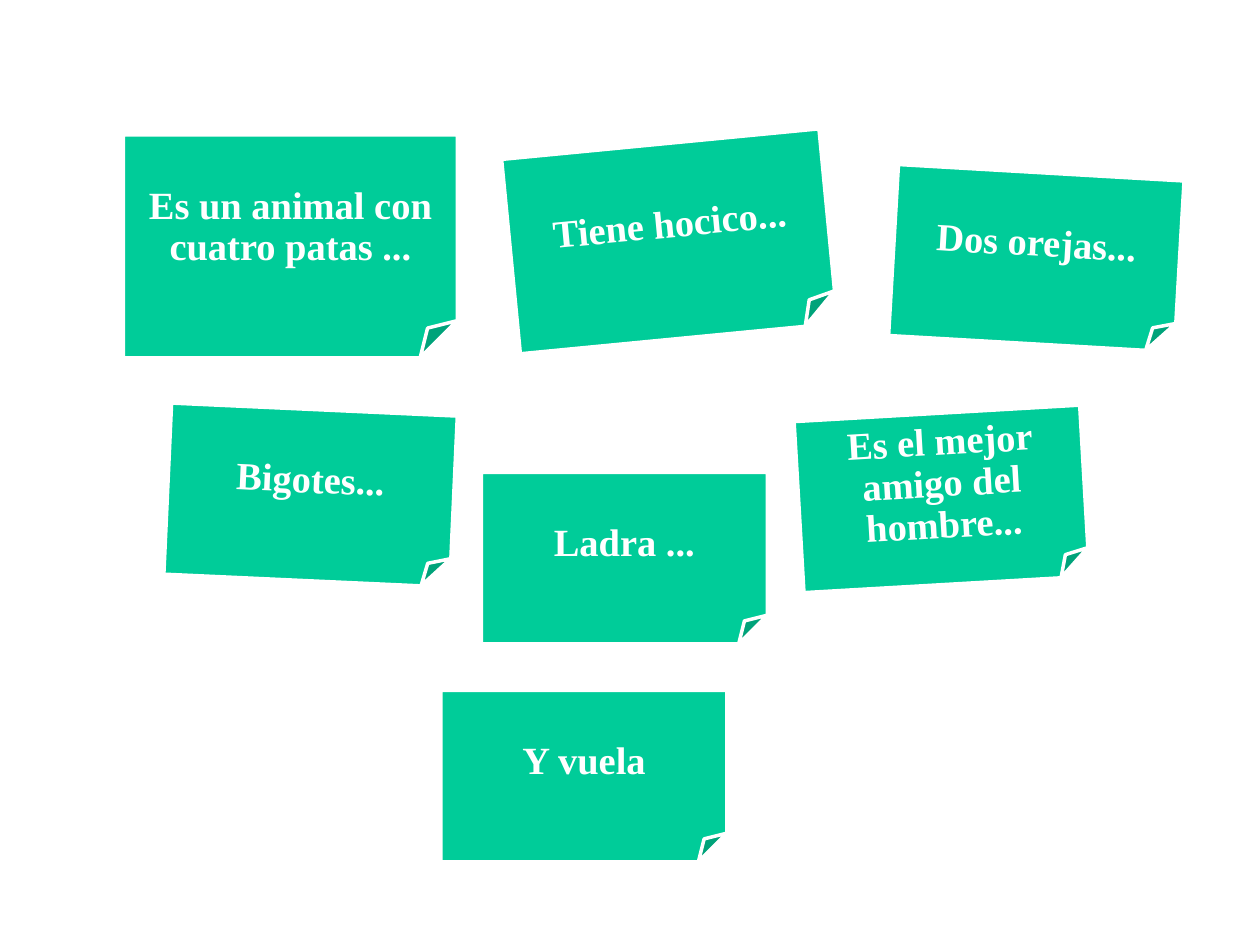
from dataclasses import dataclass
from pptx import Presentation as Deck
from pptx.dml.color import RGBColor as Color
from pptx.enum.shapes import MSO_SHAPE as Kind
from pptx.enum.text import MSO_ANCHOR as Anchor, PP_ALIGN as Align
from pptx.util import Emu, Pt


@dataclass(frozen=True)
class Theme:
    green: str = "00CC99"
    white: str = "FFFFFF"
    face: str = "Times New Roman"
    size: int = 22
    edge: int = 2


def px(num):
    return Emu(num * 9144)


def write(frame, text, *, face, size, color, bold=True, after=8, lead=0.9):
    para = frame.paragraphs[0]
    para.alignment = Align.CENTER
    para.line_spacing = lead
    para.space_after = Pt(after)
    run = para.add_run()
    run.text = text
    font = run.font
    font.name, font.size, font.bold = face, Pt(size), bold
    font.color.rgb = Color.from_string(color)


class Board:
    def __init__(self, slide, theme):
        self.slide = slide
        self.theme = theme

    def sheet(self, group, box, turn):
        theme = self.theme
        shape = group.shapes.add_shape(Kind.FOLDED_CORNER, *map(px, box))
        shape.rotation = turn
        shape.shadow.inherit = False
        shape.fill.solid()
        shape.fill.fore_color.rgb = Color.from_string(theme.green)
        shape.line.color.rgb = Color.from_string(theme.white)
        shape.line.width = Pt(theme.edge)

    def label(self, group, text, box, turn):
        theme = self.theme
        shape = group.shapes.add_textbox(*map(px, box))
        shape.rotation = turn
        frame = shape.text_frame
        frame.word_wrap = True
        frame.vertical_anchor = Anchor.MIDDLE
        frame.margin_left = frame.margin_right = px(9)
        frame.margin_top = frame.margin_bottom = px(9)
        write(frame, text, face=theme.face, size=theme.size, color=theme.white)

    def note(self, text, left, top, wide=227, high=136, turn=0):
        group = self.slide.shapes.add_group_shape()
        self.sheet(group, (left, top, wide, high), turn)
        self.label(group, text, (left, top, wide, high * 5 // 6), turn)


def main():
    deck = Deck()
    deck.slide_width, deck.slide_height = px(1000), px(750)
    board = Board(deck.slides.add_slide(deck.slide_layouts[6]), Theme())
    board.note("Es un animal con cuatro patas ...", 98, 107, 265, 177)
    board.note("Tiene hocico...", 405, 114, 253, 155, turn=354.5)
    board.note("Dos orejas...", 709, 137, turn=3.3)
    board.note("Bigotes...", 133, 325, turn=2.6)
    board.note("Ladra ...", 382, 375)
    board.note("Es el mejor amigo del hombre...", 634, 328, turn=356.7)
    board.note("Y vuela", 350, 548)
    deck.save("out.pptx")


if __name__ == "__main__":
    main()
